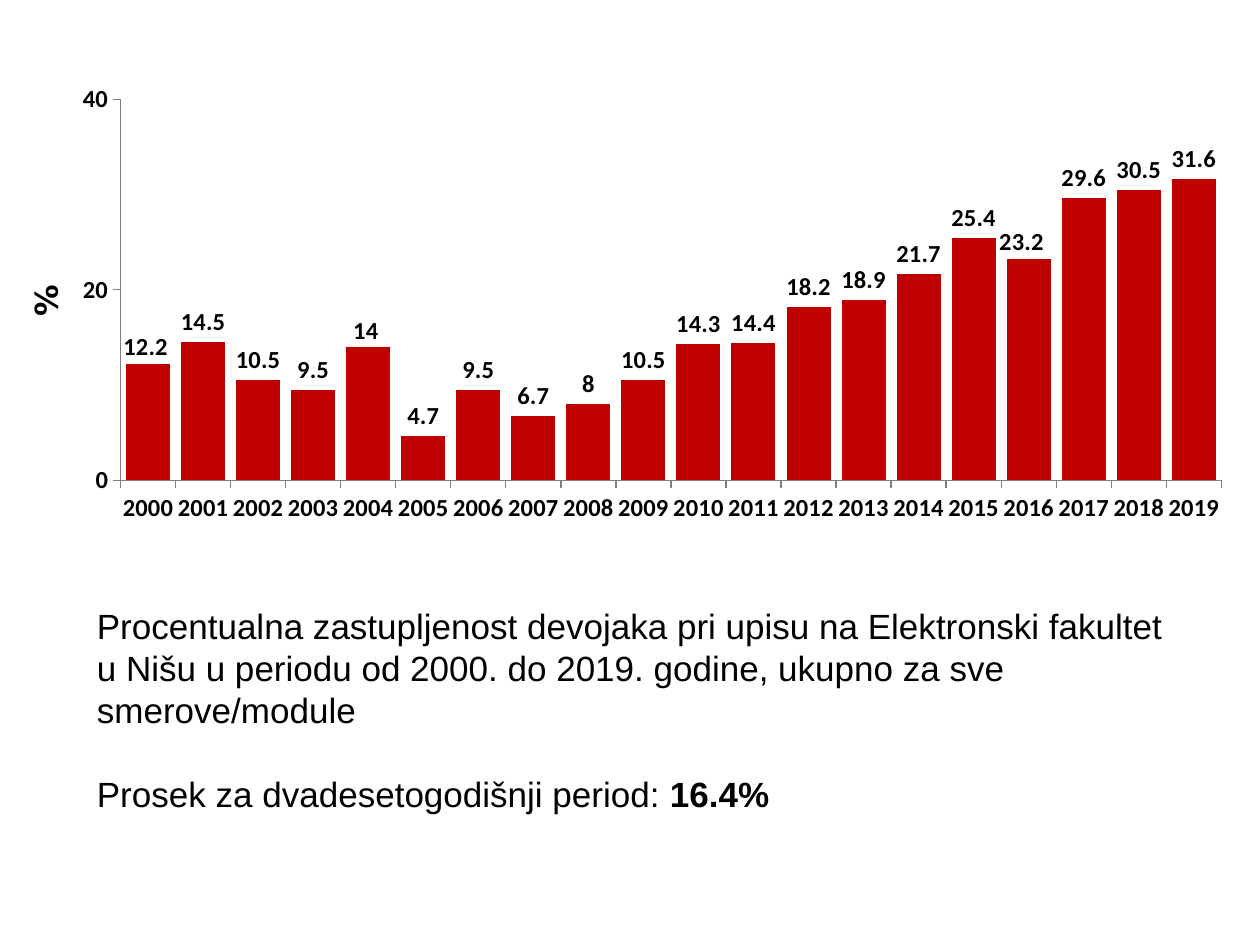
import dataclasses
import typing

import lxml.etree
import pptx
import pptx.chart.data
import pptx.dml.color
import pptx.enum.chart
import pptx.enum.text
import pptx.oxml.ns
import pptx.util

Inches = pptx.util.Inches
Pt = pptx.util.Pt
RGB = pptx.dml.color.RGBColor


@dataclasses.dataclass(frozen=True)
class Theme:
    text: RGB = RGB(0, 0, 0)
    bar: RGB = RGB(0xC0, 0, 0)
    axis: RGB = RGB(0x80, 0x80, 0x80)
    chart_font: str = "Calibri"
    unit_font: str = "DejaVu Sans"
    body_font: str = "Arial"
    chart_size: int = 14
    unit_size: int = 18
    body_size: int = 20


class Frame(typing.NamedTuple):
    left: float
    top: float
    width: float
    height: float

    def lengths(self) -> list:
        return [Inches(value) for value in self]


class LabelShift(typing.NamedTuple):
    """Moves one value label by fractions of the chart size."""
    year: int
    x: float
    y: float


THEME = Theme()
FIRST_YEAR = 2000
SHARES = (12.2, 14.5, 10.5, 9.5, 14, 4.7, 9.5, 6.7, 8, 10.5,
          14.3, 14.4, 18.2, 18.9, 21.7, 25.4, 23.2, 29.6, 30.5, 31.6)
LABEL_SHIFTS = (LabelShift(2000, -0.002, 0.005), LabelShift(2004, -0.002, 0.006),
                LabelShift(2016, -0.006, 0.005))
PLOT = Frame(0.078, 0.026, 0.912, 0.615)


def style_font(font, size: int, name: str, bold: bool = False) -> None:
    font.size = Pt(size)
    font.name = name
    font.bold = bold
    font.color.rgb = THEME.text


def style_chart_font(font) -> None:
    style_font(font, THEME.chart_size, THEME.chart_font, bold=True)


def manual_layout(**settings) -> lxml.etree._Element:
    tag = pptx.oxml.ns.qn
    layout = lxml.etree.Element(tag("c:layout"))
    manual = lxml.etree.SubElement(layout, tag("c:manualLayout"))
    for name, value in settings.items():
        lxml.etree.SubElement(manual, tag(f"c:{name}")).set("val", str(value))
    return layout


def place_plot(chart) -> None:
    plot_area = chart.element.chart.plotArea
    for old in plot_area.findall(pptx.oxml.ns.qn("c:layout")):
        plot_area.remove(old)
    plot_area.insert(0, manual_layout(
        layoutTarget="inner", xMode="edge", yMode="edge",
        x=PLOT.left, y=PLOT.top, w=PLOT.width, h=PLOT.height))


def style_axis(axis) -> None:
    axis.has_major_gridlines = False
    axis.major_tick_mark = pptx.enum.chart.XL_TICK_MARK.OUTSIDE
    axis.minor_tick_mark = pptx.enum.chart.XL_TICK_MARK.NONE
    axis.format.line.color.rgb = THEME.axis
    axis.format.line.width = Pt(0.75)
    style_chart_font(axis.tick_labels.font)


def label_bars(series) -> None:
    outside = pptx.enum.chart.XL_LABEL_POSITION.OUTSIDE_END
    labels = series.data_labels
    labels.show_value = True
    labels.position = outside
    style_chart_font(labels.font)
    for shift in LABEL_SHIFTS:
        index = shift.year - FIRST_YEAR
        label = series.points[index].data_label
        style_chart_font(label.font)
        label.position = outside
        element = labels._element.xpath(f'c:dLbl[c:idx/@val="{index}"]')[0]
        element.insert(1, manual_layout(x=shift.x, y=shift.y))


def add_share_chart(page, frame: Frame) -> None:
    data = pptx.chart.data.CategoryChartData()
    data.categories = [str(FIRST_YEAR + index) for index in range(len(SHARES))]
    data.add_series("Series 1", SHARES)
    chart = page.shapes.add_chart(
        pptx.enum.chart.XL_CHART_TYPE.COLUMN_CLUSTERED, *frame.lengths(), data).chart
    chart.has_legend = False
    chart.has_title = False
    style_chart_font(chart.font)
    place_plot(chart)
    style_axis(chart.category_axis)
    style_axis(chart.value_axis)
    chart.value_axis.minimum_scale = 0
    chart.value_axis.maximum_scale = 40
    chart.value_axis.major_unit = 20
    plot = chart.plots[0]
    plot.gap_width = 25
    plot.vary_by_categories = False
    series = plot.series[0]
    series.format.fill.solid()
    series.format.fill.fore_color.rgb = THEME.bar
    label_bars(series)


def add_span(para, text: str, size: int, font: str, bold: bool = False) -> None:
    span = para.add_run()
    span.text = text
    style_font(span.font, size, font, bold)


def add_unit(page, frame: Frame) -> None:
    box = page.shapes.add_textbox(*frame.lengths())
    box.rotation = 270
    text = box.text_frame
    text.word_wrap = True
    text.margin_left = text.margin_right = text.margin_top = text.margin_bottom = 0
    para = text.paragraphs[0]
    para.alignment = pptx.enum.text.PP_ALIGN.CENTER
    para.space_before = para.space_after = Pt(3)
    add_span(para, "%", THEME.unit_size, THEME.unit_font, bold=True)


def add_summary(page, frame: Frame) -> None:
    text = page.shapes.add_textbox(*frame.lengths()).text_frame
    text.word_wrap = True
    body = (THEME.body_size, THEME.body_font)
    add_span(text.paragraphs[0],
             "Procentualna zastupljenost devojaka pri upisu na Elektronski fakultet "
             "u Nišu u periodu od 2000. do 2019. godine, ukupno za sve smerove/module",
             *body)
    average = text.add_paragraph()
    average.space_before = Pt(24)
    add_span(average, "Prosek za dvadesetogodišnji period: ", *body)
    add_span(average, "16.4%", *body, bold=True)


def main() -> None:
    deck = pptx.Presentation()
    deck.slide_width, deck.slide_height = Inches(10), Inches(7.5)
    page = deck.slides.add_slide(deck.slide_layouts[6])
    add_share_chart(page, Frame(0.21, 0.66, 9.58, 4.92))
    add_unit(page, Frame(-0.72, 2.23, 2.17, 0.31))
    add_summary(page, Frame(0.67, 4.75, 8.75, 2.12))
    deck.save("out.pptx")


if __name__ == "__main__":
    main()
